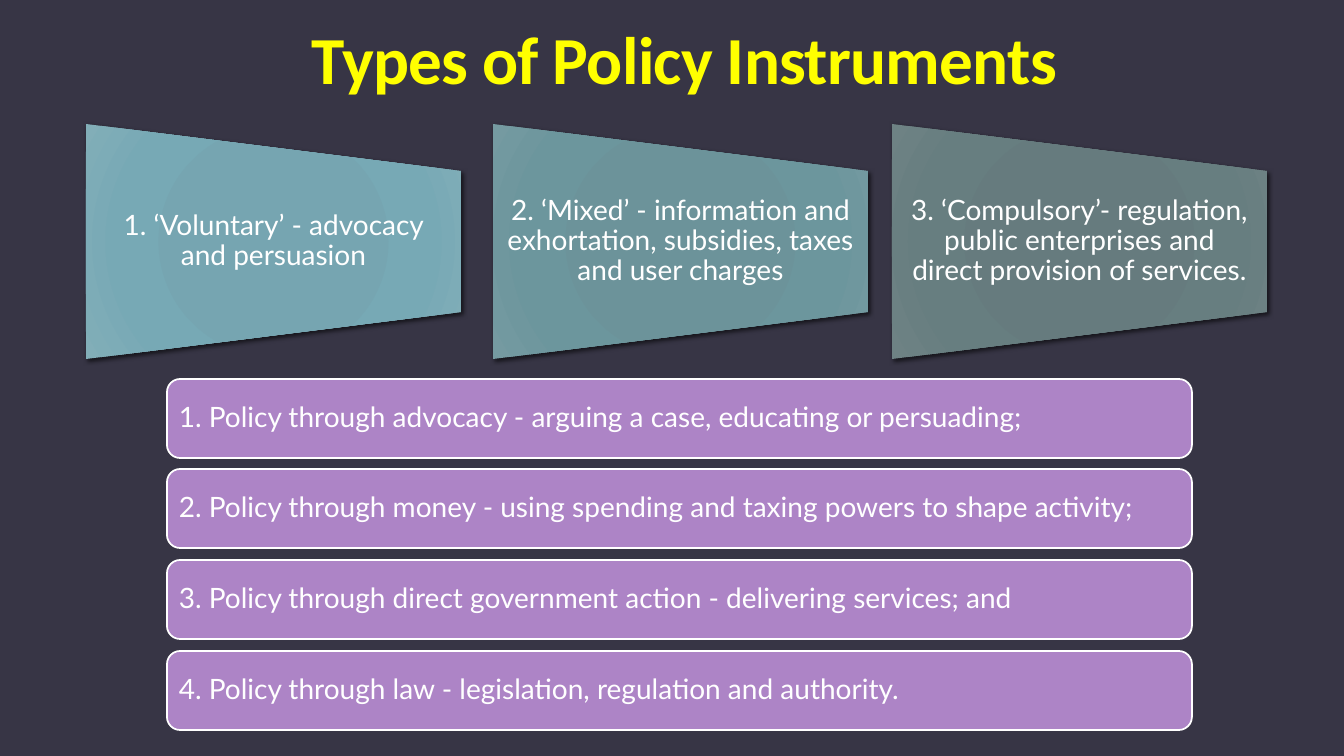
from dataclasses import dataclass

from lxml.etree import SubElement
from pptx import Presentation
from pptx.dml.color import RGBColor
from pptx.enum.shapes import MSO_SHAPE as Shape
from pptx.enum.text import MSO_ANCHOR as Anchor, PP_ALIGN as Align
from pptx.oxml import parse_xml
from pptx.oxml.ns import nsdecls, qn
from pptx.util import Pt

WIDE, HIGH = 1344, 756
SCALE = 12192000 / WIDE

BACK = RGBColor(0x37, 0x35, 0x45)
GOLD = RGBColor(0xFF, 0xFF, 0x00)
WHITE = RGBColor(0xFF, 0xFF, 0xFF)
PLUM = RGBColor(0xAD, 0x84, 0xC6)

STOPS = (0, 34, 70, 100)
CARD_TOP, CARD_W, CARD_H = 124, 375, 235
ROW_LEFT, ROW_TOP, ROW_W, ROW_H = 167, 379, 1025, 79


@dataclass
class Card:
    left: int
    hues: tuple[str, ...]
    text: str


CARDS = [
    Card(86, ("74A4B1", "76A5B1", "77A9B5", "82AEB8"),
         "1. ‘Voluntary’ - advocacy and persuasion"),
    Card(493, ("6A9299", "6C939A", "6C969D", "759AA1"),
         "2. ‘Mixed’ - information and exhortation, subsidies, taxes and user charges"),
    Card(892, ("657A7D", "667B7E", "677E80", "6E8284"),
         "3. ‘Compulsory’- regulation, public enterprises and direct provision of services."),
]

ROWS = [
    "1. Policy through advocacy - arguing a case, educating or persuading;",
    "2. Policy through money - using spending and taxing powers to shape activity;",
    "3. Policy through direct government action - delivering services; and",
    "4. Policy through law - legislation, regulation and authority.",
]


def px(*sizes: int) -> list[int]:
    return [round(size * SCALE) for size in sizes]


def write(shape, text: str, *, size: int = 20, font: str = "Lato",
          color: RGBColor = WHITE, bold: bool = False, align=Align.CENTER,
          anchor=Anchor.MIDDLE, pads: tuple[int, int] = (14, 0),
          lead: float = 0.9, track: int = 0) -> None:
    """Set the text of a shape; track is in hundredths of a point."""
    frame = shape.text_frame
    frame.word_wrap = True
    frame.vertical_anchor = anchor
    side, edge = px(*pads)
    frame.margin_left = frame.margin_right = side
    frame.margin_top = frame.margin_bottom = edge
    para = frame.paragraphs[0]
    para.alignment, para.line_spacing = align, lead
    run = para.add_run()
    run.text = text
    run.font.size, run.font.name, run.font.bold = Pt(size), font, bold
    run.font.color.rgb = color
    if track:
        run.font._element.set("spc", str(track))


def shade(shape, hues: tuple[str, ...]) -> None:
    """Give a shape a radial gradient and a soft shadow."""
    stops = "".join(
        f'<a:gs pos="{pos * 1000}"><a:srgbClr val="{hue}"/></a:gs>'
        for pos, hue in zip(STOPS, hues))
    grad = parse_xml(
        f'<a:gradFill {nsdecls("a")} rotWithShape="1"><a:gsLst>{stops}</a:gsLst>'
        '<a:path path="circle"><a:fillToRect l="100000" t="100000" '
        'r="100000" b="100000"/></a:path></a:gradFill>')
    props = shape._element.spPr
    props.find(qn("a:prstGeom")).addnext(grad)
    shape.shadow.inherit = False
    cast = SubElement(props.find(qn("a:effectLst")), qn("a:outerShdw"),
                      blurRad=str(Pt(3)), dist=str(Pt(2)), dir="2700000",
                      rotWithShape="0")
    tone = SubElement(cast, qn("a:srgbClr"), val="000000")
    SubElement(tone, qn("a:alpha"), val="60000")


def draw_card(slide, card: Card) -> None:
    # The shape is turned a quarter, so its box is swapped about its centre
    turn = (CARD_W - CARD_H) // 2
    shape = slide.shapes.add_shape(
        Shape.FLOWCHART_MANUAL_OPERATION,
        *px(card.left + turn, CARD_TOP - turn, CARD_H, CARD_W))
    shape.rotation = 270
    shape.line.fill.background()
    shade(shape, card.hues)
    inset = CARD_H // 5
    label = slide.shapes.add_textbox(
        *px(card.left, CARD_TOP + inset, CARD_W, CARD_H - 2 * inset))
    write(label, card.text)


def draw_row(slide, index: int, text: str) -> None:
    top = ROW_TOP + index * 272 // 3
    bar = slide.shapes.add_shape(Shape.ROUNDED_RECTANGLE,
                                 *px(ROW_LEFT, top, ROW_W, ROW_H))
    bar.shadow.inherit = False
    bar.fill.solid()
    bar.fill.fore_color.rgb = PLUM
    bar.line.color.rgb = WHITE
    bar.line.width = Pt(1.25)
    write(bar, text, align=Align.LEFT, pads=(8, 8))


def main() -> None:
    deck = Presentation()
    deck.slide_width, deck.slide_height = px(WIDE, HIGH)
    slide = deck.slides.add_slide(deck.slide_layouts[6])
    slide.background.fill.solid()
    slide.background.fill.fore_color.rgb = BACK

    # Title
    title = slide.shapes.add_textbox(*px(84, 0, 1201, 103))
    write(title, "Types of Policy Instruments", size=48, font="Calibri",
          color=GOLD, bold=True, anchor=Anchor.BOTTOM, pads=(10, 5),
          lead=0.85, track=-50)

    # Three kinds of instrument
    for card in CARDS:
        draw_card(slide, card)

    # Four ways to make policy
    for index, text in enumerate(ROWS):
        draw_row(slide, index, text)

    deck.save("out.pptx")


if __name__ == "__main__":
    main()
